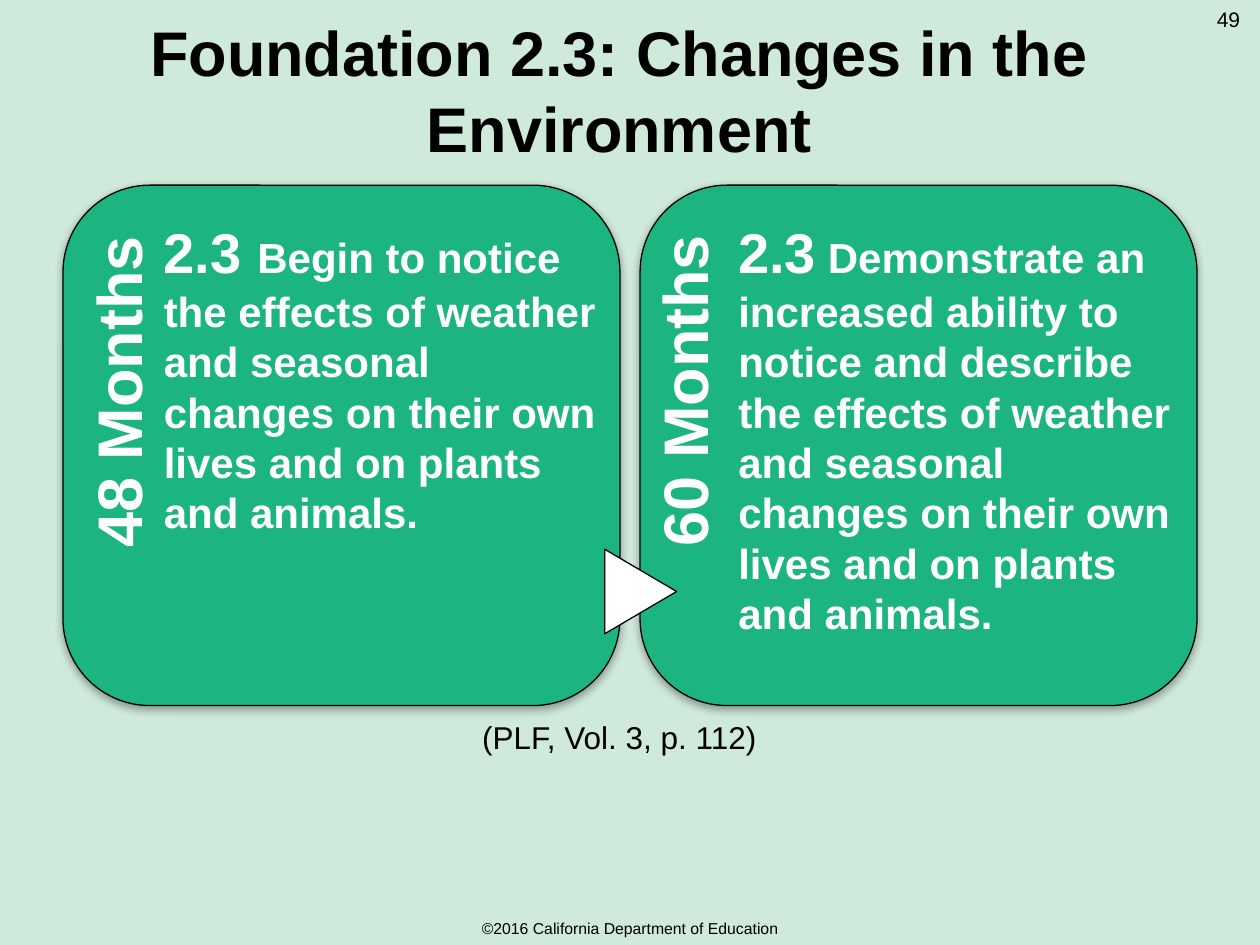
"""Build the Foundation 2.3 slide comparing expectations at 48 and 60 months."""
from dataclasses import dataclass

from lxml import etree
from pptx import Presentation
from pptx.dml.color import RGBColor
from pptx.enum.shapes import MSO_SHAPE
from pptx.enum.text import MSO_ANCHOR, MSO_AUTO_SIZE, PP_ALIGN
from pptx.oxml import parse_xml
from pptx.oxml.ns import nsdecls, qn
from pptx.util import Inches, Pt

ROUNDED = MSO_SHAPE.ROUNDED_RECTANGLE
TRIANGLE = MSO_SHAPE.FLOWCHART_EXTRACT
TOP, MIDDLE, BOTTOM = MSO_ANCHOR.TOP, MSO_ANCHOR.MIDDLE, MSO_ANCHOR.BOTTOM
LEFT, CENTER, RIGHT = PP_ALIGN.LEFT, PP_ALIGN.CENTER, PP_ALIGN.RIGHT
NO_AUTOSIZE = MSO_AUTO_SIZE.NONE

MINT = RGBColor(0xCF, 0xE9, 0xDA)
GREEN = RGBColor(0x1C, 0xB4, 0x81)
BLACK = RGBColor(0, 0, 0)
WHITE = RGBColor(0xFF, 0xFF, 0xFF)

Box = tuple[float, float, float, float]
Run = tuple[str, int]


@dataclass(frozen=True)
class AgeCard:
    """One age group with its card, rotated label and statement."""
    card_left: float
    age: str
    age_box: Box
    statement: tuple[Run, ...]
    statement_box: Box
    indent: float
    label_idx: int
    statement_idx: int


AGE_CARDS = (
    AgeCard(0.5, "48 Months", (-0.55, 2.82, 2.88, 0.79),
            (("2.3 ", 32), ("Begin to notice the effects of weather and seasonal changes "
                            "on their own lives and on plants and animals.", 24)),
            (1.2, 1.68, 3.72, 3.35), 0, 1, 2),
    AgeCard(5.08, "60 Months", (3.98, 2.86, 2.89, 0.7),
            (("2.3", 32), (" Demonstrate an increased ability to notice and describe "
                           "the effects of weather and seasonal changes on their own "
                           "lives and on plants and animals.", 24)),
            (5.26, 1.68, 4.24, 3.92), 0.5, 3, 4),
)


def place(shape, box: Box) -> None:
    """Move and size a shape in inches."""
    shape.left, shape.top, shape.width, shape.height = map(Inches, box)


def write(shape, runs: tuple[Run, ...], color: RGBColor, bold: bool,
          align: PP_ALIGN, anchor: MSO_ANCHOR, indent: float = 0) -> None:
    """Fill a text shape with one unbulleted paragraph of sized runs."""
    frame = shape.text_frame
    frame.word_wrap = True
    frame.auto_size = NO_AUTOSIZE
    frame.vertical_anchor = anchor
    paragraph = frame.paragraphs[0]
    properties = paragraph._p.get_or_add_pPr()
    properties.set("marL", str(Inches(indent)))
    properties.set("indent", "0")
    etree.SubElement(properties, qn("a:buNone"))
    paragraph.alignment = align
    paragraph.space_before = Pt(0)
    for words, size in runs:
        run = paragraph.add_run()
        run.text = words
        run.font.name = "Arial"
        run.font.size = Pt(size)
        run.font.bold = bold
        run.font.color.rgb = color


def add_outlined(slide, kind: MSO_SHAPE, box: Box, fill: RGBColor):
    """Add a filled shape with a thin black outline and no shadow."""
    shape = slide.shapes.add_shape(kind, *map(Inches, box))
    shape.shadow.inherit = False
    shape.fill.solid()
    shape.fill.fore_color.rgb = fill
    shape.line.color.rgb = BLACK
    shape.line.width = Pt(0.75)
    return shape


def add_card_shadow(card) -> None:
    """Give a card a soft shadow straight below it."""
    effects = card.element.spPr.find(qn("a:effectLst"))
    effects.append(parse_xml(
        f'<a:outerShdw {nsdecls("a")} blurRad="{Pt(5)}" dist="{Pt(1.8)}" '
        'dir="5400000" rotWithShape="0"><a:srgbClr val="000000">'
        '<a:alpha val="35000"/></a:srgbClr></a:outerShdw>'))


def add_age_card(slide, card: AgeCard) -> None:
    """Draw one age group behind its label and statement."""
    panel = add_outlined(slide, ROUNDED, (card.card_left, 1.47, 4.42, 4.13), GREEN)
    panel.adjustments[0] = 0.167
    add_card_shadow(panel)
    slide.shapes.title.element.addprevious(panel.element)
    label = slide.placeholders[card.label_idx]
    place(label, card.age_box)
    label.rotation = 270
    write(label, ((card.age, 36),), WHITE, True, RIGHT, BOTTOM)
    statement = slide.placeholders[card.statement_idx]
    place(statement, card.statement_box)
    write(statement, card.statement, WHITE, True, LEFT, TOP, card.indent)


def add_note(slide, words: str, size: int, box: Box, anchor: MSO_ANCHOR = TOP) -> None:
    """Add a centred line of plain black text."""
    note = slide.shapes.add_textbox(*map(Inches, box))
    write(note, ((words, size),), BLACK, False, CENTER, anchor)


def main() -> None:
    """Assemble and save the slide."""
    deck = Presentation()
    deck.slide_width, deck.slide_height = Inches(10), Inches(7.5)
    slide = deck.slides.add_slide(deck.slide_layouts.get_by_name("Comparison"))
    slide.background.fill.solid()
    slide.background.fill.fore_color.rgb = MINT

    title = slide.shapes.title
    place(title, (0.33, 0, 9.17, 1.42))
    write(title, (("Foundation 2.3: Changes in the Environment", 36),),
          BLACK, True, CENTER, MIDDLE)
    for card in AGE_CARDS:
        add_age_card(slide, card)
    progress = add_outlined(slide, TRIANGLE, (4.75, 4.41, 0.67, 0.57), WHITE)
    progress.rotation = 90

    add_note(slide, "(PLF, Vol. 3, p. 112)", 18, (3.11, 5.65, 3.61, 0.4))
    add_note(slide, "49", 12, (9.5, 0, 0.5, 0.4))
    add_note(slide, "©2016 California Department of Education", 9,
             (0, 7.24, 10, 0.25), MIDDLE)
    deck.save("out.pptx")


if __name__ == "__main__":
    main()
